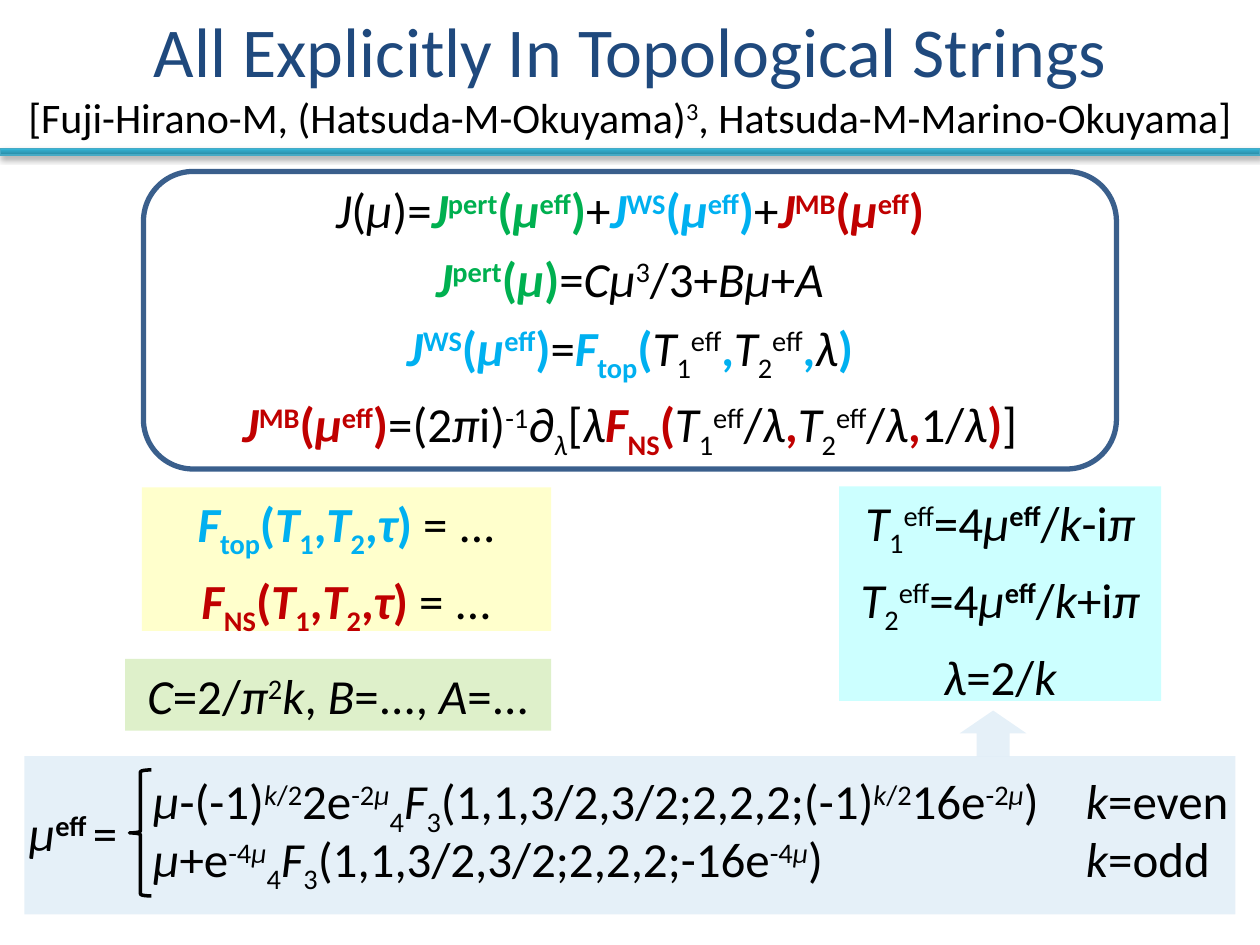
import itertools

import lxml.etree
import pptx
import pptx.dml.color
import pptx.enum.shapes
import pptx.enum.text
import pptx.oxml
import pptx.oxml.ns
import pptx.util

Pt = pptx.util.Pt
RGBColor = pptx.dml.color.RGBColor
MSO_SHAPE = pptx.enum.shapes.MSO_SHAPE
PP_ALIGN = pptx.enum.text.PP_ALIGN
MIDDLE = pptx.enum.text.MSO_ANCHOR.MIDDLE
qn = pptx.oxml.ns.qn

BLACK = RGBColor(0x00, 0x00, 0x00)
NAVY = RGBColor(0x1F, 0x49, 0x7D)
FRAME = RGBColor(0x3A, 0x5F, 0x8C)
GREEN = RGBColor(0x00, 0xB0, 0x50)
SKY = RGBColor(0x00, 0xB0, 0xF0)
RED = RGBColor(0xC0, 0x00, 0x00)
BLUE = RGBColor(0x00, 0x70, 0xC0)
LIME = RGBColor(0x92, 0xD0, 0x50)
CYAN = RGBColor(0xCC, 0xFF, 0xFF)
YELLOW = RGBColor(0xFF, 0xFF, 0xCC)
BAR_DARK = RGBColor(0x2A, 0x88, 0xA2)
BAR_LIGHT = RGBColor(0x34, 0xB4, 0xD6)
BAR_EDGE = RGBColor(0x46, 0xAA, 0xC5)

FONT = "Calibri"
VARIABLES = "ABCFJTkμπλτ"
BASELINES = {"^": 30000, "_": -25000}


def add_formulas(frame, formulas, align=PP_ALIGN.CENTER):
    """Write one paragraph per formula, each a list of (colour, markup).

    ^x^ raises and _x_ lowers x, * switches bold, coloured parts are bold,
    and variables are italic (capitals only on the base line).
    """
    for row, formula in enumerate(formulas):
        paragraph = frame.paragraphs[0] if row == 0 else frame.add_paragraph()
        paragraph.alignment = align
        paragraph.font.size = Pt(28)
        paragraph.font.name = FONT
        if row:
            paragraph.space_before = Pt(5.6)
        for color, markup in formula:
            bold, baseline, styled = color != BLACK, 0, []
            for char in markup:
                if char == "*":
                    bold = not bold
                elif char in BASELINES:
                    baseline = 0 if baseline else BASELINES[char]
                else:
                    italic = char in VARIABLES and (not baseline or char.islower())
                    styled.append(((bold, italic, baseline), char))
            for style, group in itertools.groupby(styled, lambda item: item[0]):
                run = paragraph.add_run()
                run.text = "".join(char for _, char in group)
                run.font.bold, run.font.italic = style[:2]
                run.font.color.rgb = color
                if style[2]:
                    run.font._element.set("baseline", str(style[2]))


def fill_tint(shape, color, percent):
    """Fill with a colour of the given opacity."""
    shape.fill.solid()
    shape.fill.fore_color.rgb = color
    srgb = shape._element.spPr.find(qn("a:solidFill")).find(qn("a:srgbClr"))
    lxml.etree.SubElement(srgb, qn("a:alpha")).set("val", str(percent * 1000))


deck = pptx.Presentation()
deck.slide_width, deck.slide_height = Pt(720), Pt(540)
slide = deck.slides.add_slide(deck.slide_layouts[6])
shapes = slide.shapes

# Title and rule
bar = shapes.add_shape(MSO_SHAPE.RECTANGLE, 0, Pt(85), Pt(720), Pt(3.6))
bar.fill.gradient()
bar.fill.gradient_angle = 90
for stop, color in zip(bar.fill.gradient_stops, (BAR_DARK, BAR_LIGHT)):
    stop.color.rgb = color
bar.line.color.rgb = BAR_EDGE
bar.line.width = Pt(0.75)
bar._element.spPr.append(pptx.oxml.parse_xml(
    '<a:effectLst xmlns:a="http://schemas.openxmlformats.org/drawingml/2006/main">'
    '<a:outerShdw blurRad="39400" dist="22900" dir="5400000" rotWithShape="0">'
    '<a:srgbClr val="000000"><a:alpha val="35000"/></a:srgbClr>'
    '</a:outerShdw></a:effectLst>'))

title = shapes.add_textbox(0, 0, Pt(720), Pt(85)).text_frame
title.word_wrap = True
title.vertical_anchor = MIDDLE
heading = title.paragraphs[0]
heading.alignment = PP_ALIGN.CENTER
heading.font.name = FONT
for text, size, color, raised in [
    ("All Explicitly In Topological Strings", 40, NAVY, False),
    ("[Fuji-Hirano-M, (Hatsuda-M-Okuyama)", 24, BLACK, False),
    ("3", 24, BLACK, True),
    (", Hatsuda-M-Marino-Okuyama]", 24, BLACK, False),
]:
    run = heading.add_run()
    run.text = text
    run.font.size = Pt(size)
    run.font.color.rgb = color
    if raised:
        run.font._element.set("baseline", "30000")
    if color == NAVY:
        heading.add_line_break()

# Grand potential
potential = shapes.add_shape(
    MSO_SHAPE.ROUNDED_RECTANGLE, Pt(82), Pt(98), Pt(556), Pt(170))
potential.shadow.inherit = False
potential.fill.background()
potential.line.color.rgb = FRAME
potential.line.width = Pt(3)
potential.text_frame.word_wrap = True
potential.text_frame.vertical_anchor = MIDDLE
add_formulas(potential.text_frame, [
    [(BLACK, "J(μ)="), (GREEN, "J^pert^(μ^eff^)"), (BLACK, "+"),
     (SKY, "J^WS^(μ^eff^)"), (BLACK, "+"), (RED, "J^MB^(μ^eff^)")],
    [(GREEN, "J^pert^(μ)"), (BLACK, "=Cμ^3^/3+Bμ+A")],
    [(SKY, "J^WS^(μ^eff^)"), (BLACK, "="), (SKY, "F_top_("),
     (BLACK, "T_1_^eff^"), (SKY, ","), (BLACK, "T_2_^eff^"), (SKY, ","),
     (BLACK, "λ"), (SKY, ")")],
    [(RED, "J^MB^(μ^eff^)"), (BLACK, "=(2πi)^-1^∂_λ_[λ"), (RED, "F_NS_("),
     (BLACK, "T_1_^eff^/λ"), (RED, ","), (BLACK, "T_2_^eff^/λ"), (RED, ","),
     (BLACK, "1/λ"), (RED, ")"), (BLACK, "]")],
])

# Definitions: position, fill, opacity, formulas
definitions = [
    ((479.5, 278, 184, 122.5), CYAN, 100, [
        [(BLACK, "T_1_^eff^=4μ*^eff^*/k-iπ")],
        [(BLACK, "T_2_^eff^=4μ*^eff^*/k+iπ")],
        [(BLACK, "λ=2/k")]]),
    ((81, 278.5, 234, 82), YELLOW, 100, [
        [(SKY, "F_top_(T_1_,T_2_,τ) "), (BLACK, "= ...")],
        [(RED, "F_NS_(T_1_,T_2_,τ) "), (BLACK, "= ...")]]),
    ((71.5, 376.5, 243.5, 41), LIME, 30, [
        [(BLACK, "C=2/π^2^k, B=..., A=...")]]),
]
for place, color, opacity, formulas in definitions:
    box = shapes.add_textbox(*map(Pt, place))
    box.text_frame.word_wrap = False
    fill_tint(box, color, opacity)
    add_formulas(box.text_frame, formulas)

# Effective chemical potential
panel = shapes.add_shape(MSO_SHAPE.RECTANGLE, Pt(14), Pt(432), Pt(692), Pt(90.5))
arrow = shapes.add_shape(MSO_SHAPE.DOWN_ARROW, Pt(548.5), Pt(406), Pt(38), Pt(26))
arrow.rotation = 180
for tinted in (panel, arrow):
    tinted.shadow.inherit = False
    tinted.line.fill.background()
    fill_tint(tinted, BLUE, 10)

brace = shapes.add_shape(MSO_SHAPE.LEFT_BRACE, Pt(74), Pt(440), Pt(12.5), Pt(72))
brace.shadow.inherit = False
brace.fill.background()
brace.line.color.rgb = BLACK
brace.line.width = Pt(2)

EVEN_TOP, ODD_TOP = 437, 470
for left, top, width, markup in [
    (9.5, 455, 69, "μ*^eff ^*="),
    (80.5, EVEN_TOP, 556,
     "μ-(-1)^k/2^2e^-2μ^_4_F_3_(1,1,3/2,3/2;2,2,2;(-1)^k/2^16e^-2μ^)"),
    (80.5, ODD_TOP, 420.5, "μ+e^-4μ^_4_F_3_(1,1,3/2,3/2;2,2,2;-16e^-4μ^)"),
    (613.5, EVEN_TOP, 96.5, "k=even"),
    (613.5, ODD_TOP, 86.5, "k=odd"),
]:
    case = shapes.add_textbox(Pt(left), Pt(top), Pt(width), Pt(41)).text_frame
    case.word_wrap = False
    add_formulas(case, [[(BLACK, markup)]], PP_ALIGN.LEFT)

deck.save("out.pptx")
